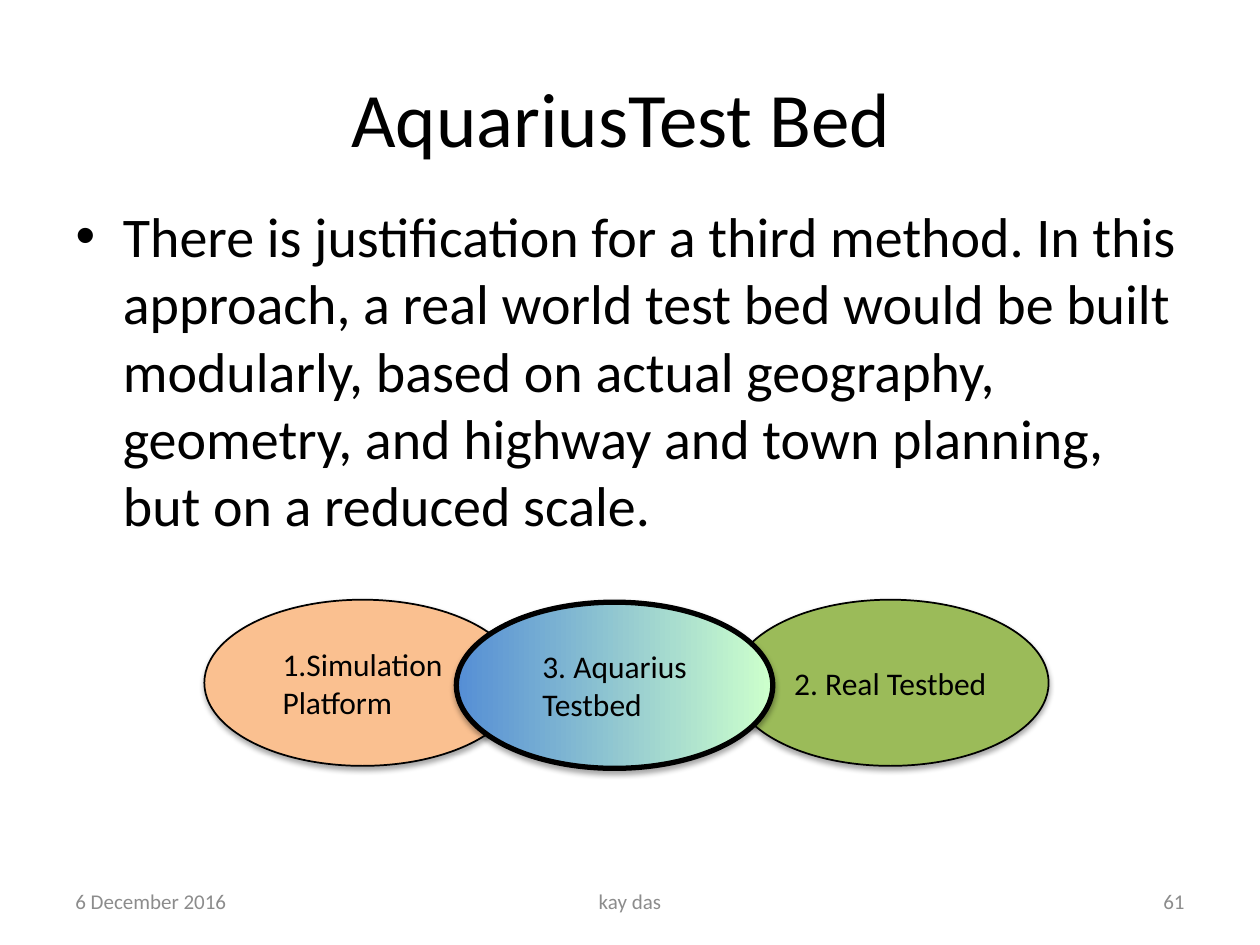
from dataclasses import dataclass
from typing import NamedTuple

from lxml.etree import SubElement
from pptx import Presentation
from pptx.dml.color import RGBColor
from pptx.enum.shapes import MSO_SHAPE as Shape
from pptx.enum.text import MSO_ANCHOR as Anchor, PP_ALIGN as Align
from pptx.oxml.ns import qn
from pptx.util import Cm, Pt


@dataclass(frozen=True)
class Theme:
    """Colours, font and type sizes of the slide."""
    font: str = "Calibri"
    ink: str = "000000"
    muted: str = "8C8C8C"
    simulation: str = "FAC090"
    real: str = "9BBB59"
    aquarius: tuple = ("558ED5", "CCFFCC")
    title_size: int = 44
    body_size: int = 32
    label_size: int = 18
    footer_size: int = 12


class Box(NamedTuple):
    """Left, top, width and height in centimetres."""
    left: float
    top: float
    width: float
    height: float

    def lengths(self):
        """Return the four values as slide lengths."""
        return [Cm(value) for value in self]


THEME = Theme()


def write_text(shape, text, *, size, color=THEME.ink, align=Align.LEFT, anchor=Anchor.MIDDLE):
    """Fill a shape with text, one paragraph per line."""
    frame = shape.text_frame
    frame.word_wrap = True
    frame.vertical_anchor = anchor
    frame.text = text
    for paragraph in frame.paragraphs:
        paragraph.alignment = align
        paragraph.space_before = Pt(0)
        for run in paragraph.runs:
            run.font.name = THEME.font
            run.font.size = Pt(size)
            run.font.color.rgb = RGBColor.from_string(color)


def place_placeholder(shape, box, text, **text_format):
    """Move a placeholder to its box and write its text."""
    shape.left, shape.top, shape.width, shape.height = box.lengths()
    write_text(shape, text, **text_format)


def add_shadow(shape):
    """Give a shape a soft shadow falling straight down."""
    shape.shadow.inherit = False
    effects = shape._element.spPr.find(qn("a:effectLst"))
    shadow = SubElement(effects, qn("a:outerShdw"), blurRad=str(Pt(3.1)), dist=str(Pt(1.8)),
                        dir="5400000", rotWithShape="0")
    color = SubElement(shadow, qn("a:srgbClr"), val=THEME.ink)
    SubElement(color, qn("a:alpha"), val="35000")


def fill_shape(shape, colors):
    """Fill a shape with one colour or a left-to-right pair."""
    if isinstance(colors, str):
        shape.fill.solid()
        shape.fill.fore_color.rgb = RGBColor.from_string(colors)
        return
    shape.fill.gradient()
    shape.fill.gradient_angle = 0
    for stop, color, position in zip(shape.fill.gradient_stops, colors, (0, 0.99)):
        stop.color.rgb = RGBColor.from_string(color)
        stop.position = position


def add_ellipse(slide, box, text, colors, line_width):
    """Add one labelled ellipse whose text block is centred."""
    ellipse = slide.shapes.add_shape(Shape.OVAL, *box.lengths())
    fill_shape(ellipse, colors)
    ellipse.line.color.rgb = RGBColor.from_string(THEME.ink)
    ellipse.line.width = Pt(line_width)
    add_shadow(ellipse)
    write_text(ellipse, text, size=THEME.label_size)
    ellipse._element.txBody.find(qn("a:bodyPr")).set("anchorCtr", "1")


def add_methods(slide, box):
    """Add the three overlapping methods, the third one in front."""
    width, height = 6.38, 3.35
    last = box.width - width
    methods = [
        (0, 0, "1.Simulation\nPlatform", THEME.simulation, 1),
        (last, 0, "2. Real Testbed", THEME.real, 1),
        (5.08, box.height - height, "3. Aquarius Testbed", THEME.aquarius, 3),
    ]
    for left, top, text, colors, line_width in methods:
        ellipse_box = Box(box.left + left, box.top + top, width, height)
        add_ellipse(slide, ellipse_box, text, colors, line_width)


def add_footer(slide, box):
    """Add the date, author and slide number across the footer."""
    side, middle = 5.92, 8.05
    parts = [
        (0, side, "6 December 2016", Align.LEFT),
        ((box.width - middle) / 2, middle, "kay das", Align.CENTER),
        (box.width - side, side, "61", Align.RIGHT),
    ]
    for left, width, text, align in parts:
        part_box = Box(box.left + left, box.top, width, box.height)
        part = slide.shapes.add_textbox(*part_box.lengths())
        write_text(part, text, size=THEME.footer_size, color=THEME.muted, align=align)


def main():
    """Build and save the slide."""
    presentation = Presentation()
    presentation.slide_width, presentation.slide_height = Cm(25.4), Cm(19.05)
    slide = presentation.slides.add_slide(presentation.slide_layouts[1])
    place_placeholder(slide.shapes.title, Box(1.27, 0.76, 22.86, 3.18), "AquariusTest Bed ",
                      size=THEME.title_size, align=Align.CENTER)
    place_placeholder(
        slide.placeholders[1], Box(1.27, 3.94, 22.86, 13.84),
        "There is justification for a third method. In this approach, a real world test bed "
        "would be built modularly, based on actual geography, geometry, and highway and town "
        "planning, but on a reduced scale.",
        size=THEME.body_size, anchor=Anchor.TOP)
    add_footer(slide, Box(1.27, 17.65, 22.86, 1.02))
    add_methods(slide, Box(4.12, 12.09, 17.02, 3.4))
    presentation.save("out.pptx")


if __name__ == "__main__":
    main()
